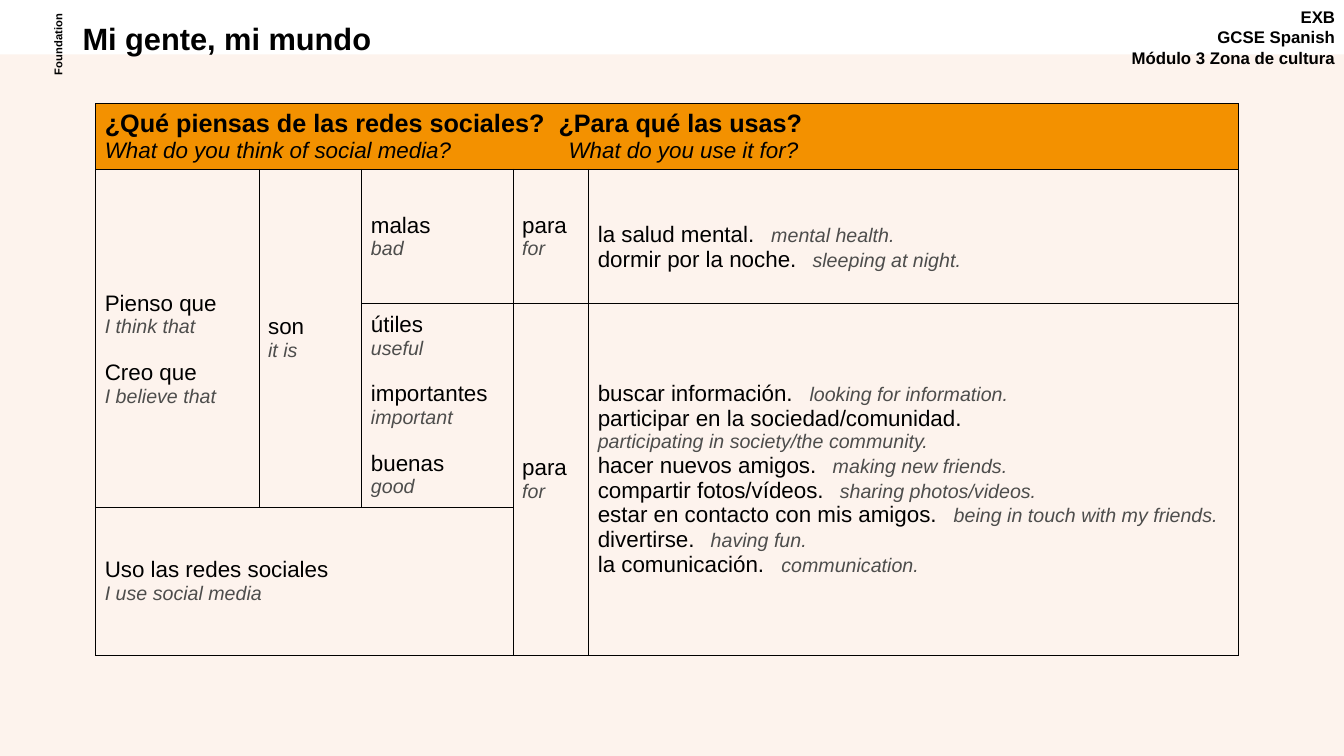
from lxml import etree
from pptx import Presentation
from pptx.dml.color import RGBColor
from pptx.enum.shapes import MSO_SHAPE as SHAPE
from pptx.enum.text import MSO_ANCHOR as ANCHOR, PP_ALIGN as ALIGN
from pptx.oxml.ns import qn
from pptx.util import Inches, Pt

BLACK, GREY, CREAM, ORANGE = "000000", "4D4D4C", "FDF3ED", "F39100"
COLS = [1.62, 1.02, 1.5, 0.75, 6.44]
ROWS = [0.65, 1.33, 1.95, 1.47]
SPANISH = dict(size=16, color=BLACK)
ENGLISH = dict(size=14, color=GREY, italic=True)
QUESTION = dict(size=18, color=BLACK, bold=True)
MEANING = dict(size=16, color=BLACK, italic=True)
BLANK_LINE = 0.22

STACKED = [
    (1, 0, 2, 0, BLANK_LINE, [("Pienso que", "I think that"), ("Creo que", "I believe that")]),
    (1, 1, 2, 1, 0, [("son", "it is")]),
    (1, 2, 1, 2, 0, [("malas", "bad")]),
    (1, 3, 1, 3, 0, [("para", "for")]),
    (2, 2, 2, 2, 0, [("útiles", "useful"), ("importantes", "important"), ("buenas", "good")]),
    (2, 3, 3, 3, 0, [("para", "for")]),
    (3, 0, 3, 2, 0, [("Uso las redes sociales", "I use social media")]),
]
INLINE = [
    (1, 4, 1, 4, BLANK_LINE, [
        ("la salud mental.", "mental health.", 1.72),
        ("dormir por la noche.", "sleeping at night.", 2.13),
    ]),
    (2, 4, 3, 4, 0, [
        ("buscar información.", "looking for information.", 2.1),
        ("participar en la sociedad/comunidad.", "participating in society/the community.", None),
        ("hacer nuevos amigos.", "making new friends.", 2.33),
        ("compartir fotos/vídeos.", "sharing photos/videos.", 2.4),
        ("estar en contacto con mis amigos.", "being in touch with my friends.", 3.53),
        ("divertirse.", "having fun.", 1.12),
        ("la comunicación.", "communication.", 1.82),
    ]),
]


def rgb(value):
    """Return the colour for a hex string."""
    return RGBColor.from_string(value)


def add_run(p, text, size, color, **style):
    """Add a formatted run to a paragraph."""
    r = p.add_run()
    r.text = text
    r.font.color.rgb = rgb(color)
    for name, value in dict(name="Arial", size=Pt(size), **style).items():
        setattr(r.font, name, value)


def add_tab(p, position):
    """Add a left tab stop to a paragraph."""
    tabs = etree.SubElement(p._p.get_or_add_pPr(), qn("a:tabLst"))
    etree.SubElement(tabs, qn("a:tab"), pos=str(Inches(position)), algn="l")


def write(tf, lines):
    """Write lines of (runs, tab position, space before) into a text frame."""
    for i, (runs, tab, space) in enumerate(lines):
        p = tf.paragraphs[0] if i == 0 else tf.add_paragraph()
        if space:
            p.space_before = Pt(space)
        if tab:
            add_tab(p, tab)
        for text, style in runs:
            add_run(p, text, **style)


def add_label(s, box, lines, size, align=ALIGN.LEFT, rotation=0):
    """Add a bold text box."""
    sp = s.shapes.add_textbox(*map(Inches, box))
    sp.rotation = rotation
    tf = sp.text_frame
    tf.word_wrap = True
    write(tf, [([(line, dict(size=size, color=BLACK, bold=True))], None, 0) for line in lines])
    for p in tf.paragraphs:
        p.alignment = align
    return tf


def add_heading(s, x, y, w):
    """Place the title, level and course labels along the top."""
    title = add_label(s, (x + 0.72, y + 0.19, 6.88, 0.43), ["Mi gente, mi mundo"], 22)
    title.paragraphs[0].line_spacing = 0.9
    add_label(s, (x + 0.16, y + 0.31, 0.86, 0.26), ["Foundation"], 8, ALIGN.CENTER, 270)
    course = ["EXB", "GCSE Spanish", "Módulo 3 Zona de cultura"]
    add_label(s, (x + w - 2.23, y + 0.02, 2.24, 0.77), course, 12, ALIGN.RIGHT)


def add_panel(s, x, y, w, h):
    """Draw the cream panel behind the table."""
    sp = s.shapes.add_shape(SHAPE.RECTANGLE, *map(Inches, (x, y, w, h)))
    sp.shadow.inherit = False
    sp.fill.solid()
    sp.fill.fore_color.rgb = rgb(CREAM)
    sp.line.fill.background()


def add_borders(cell):
    """Give a cell thin black borders."""
    for side in "LRTB":
        ln = etree.SubElement(cell._tc.get_or_add_tcPr(), qn(f"a:ln{side}"), w=str(Pt(0.75)))
        fill = etree.SubElement(ln, qn("a:solidFill"))
        etree.SubElement(fill, qn("a:srgbClr"), val=BLACK)


def stacked_lines(pairs):
    """Put each translation under its phrase, with a gap between pairs."""
    lines = []
    for i, (phrase, meaning) in enumerate(pairs):
        lines.append(([(phrase, SPANISH)], None, BLANK_LINE * 72 if i else 0))
        lines.append(([(meaning, ENGLISH)], None, 0))
    return lines


def inline_lines(entries):
    """Put each translation after its phrase, or below it when there is no tab."""
    lines = []
    for phrase, meaning, tab in entries:
        if tab:
            lines.append(([(phrase, SPANISH), ("\t" + meaning, ENGLISH)], tab, 0))
        else:
            lines += [([(text, style)], None, 0)
                      for text, style in ((phrase, SPANISH), (meaning, ENGLISH))]
    return lines


def fill_cell(table, r1, c1, r2, c2, top, lines):
    """Merge a block of cells and write its lines."""
    cell = table.cell(r1, c1)
    if (r1, c1) != (r2, c2):
        cell.merge(table.cell(r2, c2))
    cell.margin_top = Inches(0.04 + top)
    write(cell.text_frame, lines)


def add_phrase_table(s, x, y):
    """Build the sentence-builder table."""
    box = map(Inches, (x, y, sum(COLS), sum(ROWS)))
    table = s.shapes.add_table(len(ROWS), len(COLS), *box).table
    table.first_row = table.horz_banding = False
    for col, width in zip(table.columns, COLS):
        col.width = Inches(width)
    for i, (row, height) in enumerate(zip(table.rows, ROWS)):
        row.height = Inches(height)
        for cell in row.cells:
            add_borders(cell)
            if i == 0:
                cell.fill.solid()
                cell.fill.fore_color.rgb = rgb(ORANGE)
            else:
                cell.fill.background()
            cell.vertical_anchor = ANCHOR.MIDDLE
            cell.margin_left = cell.margin_right = Inches(0.09)
            cell.margin_top = cell.margin_bottom = Inches(0.04)
    fill_cell(table, 0, 0, 0, len(COLS) - 1, 0, [
        ([("¿Qué piensas de las redes sociales?\t¿Para qué las usas?", QUESTION)], 4.5, 0),
        ([("What do you think of social media?\tWhat do you use it for?", MEANING)], 4.6, 0),
    ])
    for *block, pairs in STACKED:
        fill_cell(table, *block, stacked_lines(pairs))
    for *block, entries in INLINE:
        fill_cell(table, *block, inline_lines(entries))


def main():
    """Build and save the slide."""
    prs = Presentation()
    prs.slide_width, prs.slide_height = Inches(13.33), Inches(7.5)
    s = prs.slides.add_slide(prs.slide_layouts[6])
    add_panel(s, 0, 0.54, 13.33, 6.96)
    add_heading(s, 0, 0, 13.33)
    add_phrase_table(s, 0.95, 1.03)
    prs.save("out.pptx")


if __name__ == "__main__":
    main()
